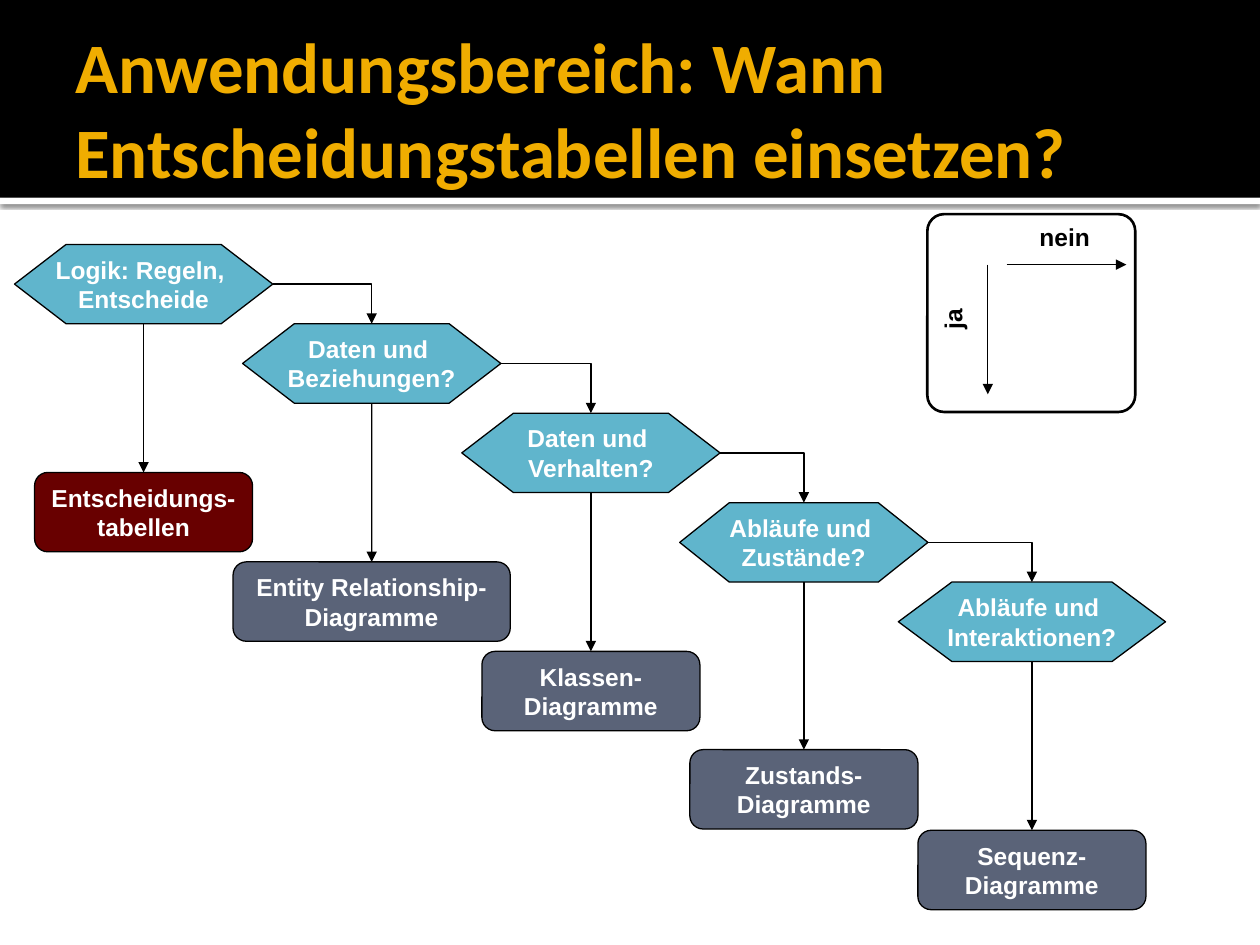
from typing import NamedTuple

from lxml.etree import SubElement
from pptx import Presentation
from pptx.dml.color import RGBColor
from pptx.enum.shapes import MSO_CONNECTOR, MSO_SHAPE
from pptx.enum.text import MSO_ANCHOR, PP_ALIGN
from pptx.oxml.ns import qn
from pptx.util import Inches, Pt

BLACK = RGBColor(0x00, 0x00, 0x00)
WHITE = RGBColor(0xFF, 0xFF, 0xFF)
GOLD = RGBColor(0xF0, 0xAD, 0x00)
TEAL = RGBColor(0x60, 0xB5, 0xCC)
SLATE = RGBColor(0x5A, 0x63, 0x78)
MAROON = RGBColor(0x68, 0x00, 0x00)

HEIGHT = 0.63
TOP, BOTTOM, RIGHT = 0, 2, 3


class Step(NamedTuple):
    mid: float
    top: float
    width: float
    ask: str
    low: float
    span: float
    answer: str
    color: RGBColor = SLATE


STEPS = [
    Step(1.14, 1.94, 2.05, "Logik: Regeln, \vEntscheide", 3.75, 1.73, "Entscheidungs-tabellen", MAROON),
    Step(2.95, 2.57, 2.05, "Daten und \vBeziehungen?", 4.46, 2.2, "Entity Relationship-Diagramme"),
    Step(4.69, 3.28, 2.05, "Daten und \vVerhalten?", 5.17, 1.73, "Klassen-Diagramme"),
    Step(6.38, 3.99, 1.97, "Abläufe und \vZustände?", 5.95, 1.81, "Zustands-Diagramme"),
    Step(8.19, 4.62, 2.12, "Abläufe und \vInteraktionen?", 6.59, 1.81, "Sequenz-Diagramme"),
]


def write(shape, text: str, size: float, color: RGBColor, font: str = "Arial", align=PP_ALIGN.CENTER) -> None:
    frame = shape.text_frame
    frame.text = text
    frame.vertical_anchor = MSO_ANCHOR.MIDDLE
    for para in frame.paragraphs:
        para.alignment = align
        para.font.name = font
        para.font.size = Pt(size)
        para.font.bold = True
        para.font.color.rgb = color


def add_bar(slide, top: float, height: float, color: RGBColor):
    bar = slide.shapes.add_shape(MSO_SHAPE.RECTANGLE, 0, Inches(top), Inches(10), Inches(height))
    bar.shadow.inherit = False
    bar.fill.solid()
    bar.fill.fore_color.rgb = color
    bar.line.fill.background()
    return bar


def add_shade(shape) -> None:
    effects = shape._element.spPr.find(qn("a:effectLst"))
    shade = SubElement(effects, qn("a:outerShdw"), blurRad=str(Pt(2.5)), dist=str(Pt(0.8)),
                       dir="5400000", algn="tl", rotWithShape="0")
    tint = SubElement(shade, qn("a:srgbClr"), val=str(BLACK))
    SubElement(tint, qn("a:alpha"), val="60000")


def add_node(slide, kind, mid: float, top: float, width: float, text: str, color: RGBColor):
    node = slide.shapes.add_shape(kind, Inches(mid - width / 2), Inches(top), Inches(width), Inches(HEIGHT))
    node.shadow.inherit = False
    node.fill.solid()
    node.fill.fore_color.rgb = color
    node.line.color.rgb = BLACK
    node.line.width = Pt(0.75)
    write(node, text, 14, WHITE)
    node.text_frame.word_wrap = kind == MSO_SHAPE.ROUNDED_RECTANGLE
    return node


def add_arrow(slide, start: tuple[float, float], end: tuple[float, float], kind=MSO_CONNECTOR.STRAIGHT):
    arrow = slide.shapes.add_connector(kind, *map(Inches, start + end))
    arrow.line.color.rgb = BLACK
    arrow.line.width = Pt(0.75)
    props = arrow._element.spPr
    SubElement(props.find(qn("a:ln")), qn("a:tailEnd"), type="triangle")
    SubElement(props, qn("a:effectLst"))
    if kind == MSO_CONNECTOR.ELBOW:
        props.find(qn("a:prstGeom")).set("prst", "bentConnector2")
    return arrow


def join(arrow, first, site: int, last) -> None:
    arrow.begin_connect(first, site)
    arrow.end_connect(last, TOP)


def add_label(slide, left: float, top: float, width: float, text: str, turn: float = 0) -> None:
    label = slide.shapes.add_textbox(Inches(left), Inches(top), Inches(width), Inches(0.34))
    label.rotation = turn
    write(label, text, 14, BLACK)
    label.text_frame.word_wrap = False


def add_header(slide) -> None:
    add_shade(add_bar(slide, 1.57, 0.05, WHITE))
    add_bar(slide, 0, 1.57, BLACK)
    title = slide.shapes.add_textbox(Inches(0.5), Inches(0.17), Inches(9), Inches(1.37))
    title.text_frame.word_wrap = True
    title.text_frame.margin_right = Inches(0.05)
    write(title, "Anwendungsbereich: Wann Entscheidungstabellen einsetzen?", 40.5, GOLD, "Calibri", PP_ALIGN.LEFT)


def add_flow(slide) -> None:
    prior = None
    for step in STEPS:
        ask = add_node(slide, MSO_SHAPE.FLOWCHART_PREPARATION, step.mid, step.top, step.width, step.ask, TEAL)
        answer = add_node(slide, MSO_SHAPE.ROUNDED_RECTANGLE, step.mid, step.low, step.span, step.answer, step.color)
        down = add_arrow(slide, (step.mid, step.top + HEIGHT), (step.mid, step.low))
        join(down, ask, BOTTOM, answer)
        if prior:
            last, shape = prior
            start = (last.mid + last.width / 2, last.top + HEIGHT / 2)
            bend = add_arrow(slide, start, (step.mid, step.top), MSO_CONNECTOR.ELBOW)
            join(bend, shape, RIGHT, ask)
        prior = step, ask


def add_legend(slide) -> None:
    add_arrow(slide, (7.99, 2.1), (8.94, 2.1))
    add_arrow(slide, (7.84, 2.1), (7.84, 3.13))
    add_label(slide, 8.15, 1.71, 0.6, "nein")
    add_label(slide, 7.38, 2.36, 0.36, "ja", 270)
    frame = slide.shapes.add_shape(MSO_SHAPE.ROUNDED_RECTANGLE, Inches(7.36), Inches(1.7), Inches(1.65), Inches(1.57))
    frame.adjustments[0] = 0.085
    frame.shadow.inherit = False
    frame.fill.background()
    frame.line.color.rgb = BLACK
    frame.line.width = Pt(1.5)


def main() -> None:
    deck = Presentation()
    deck.slide_width, deck.slide_height = Inches(10), Inches(7.5)
    slide = deck.slides.add_slide(deck.slide_layouts[6])
    add_header(slide)
    add_flow(slide)
    add_legend(slide)
    deck.save("out.pptx")


if __name__ == "__main__":
    main()
